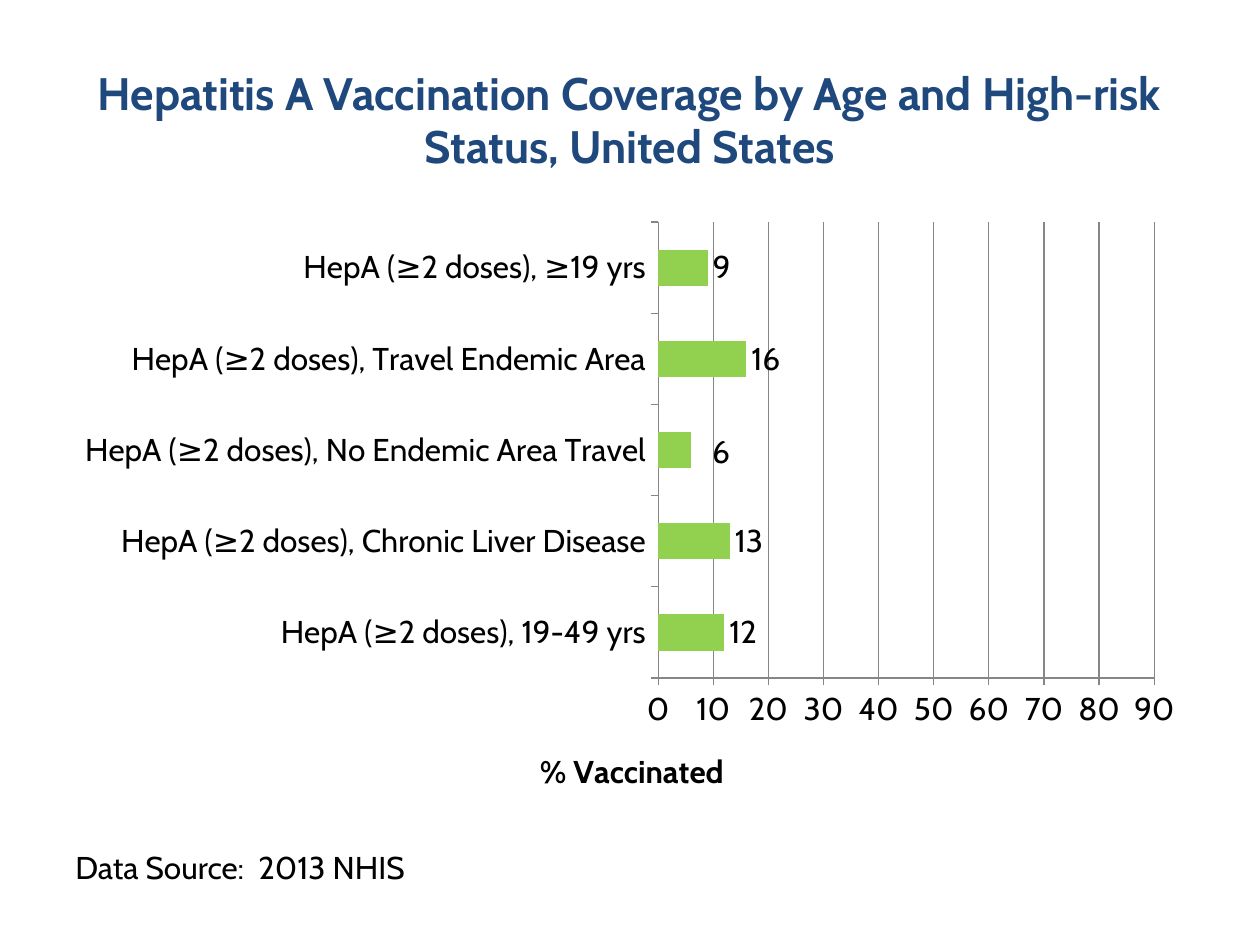
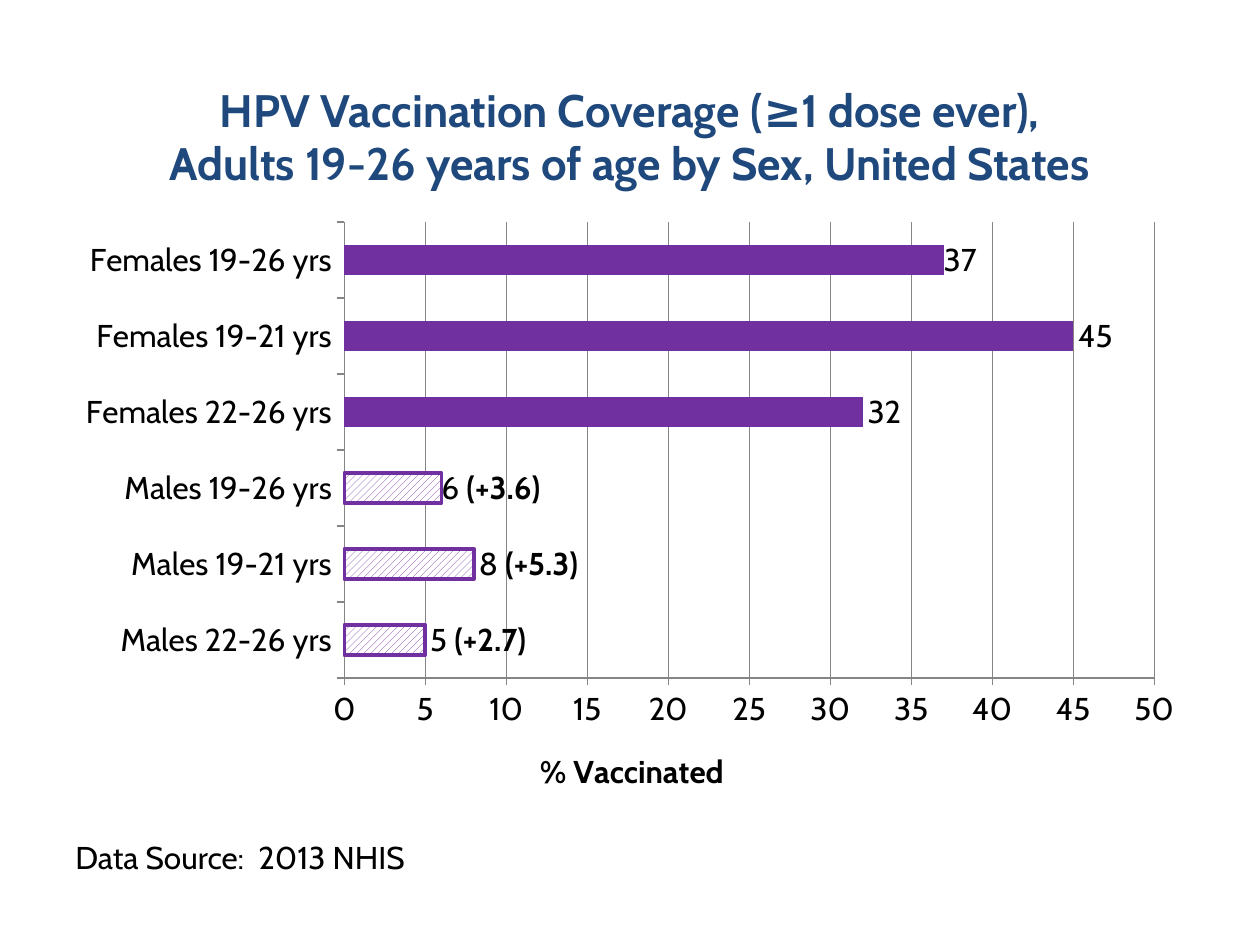
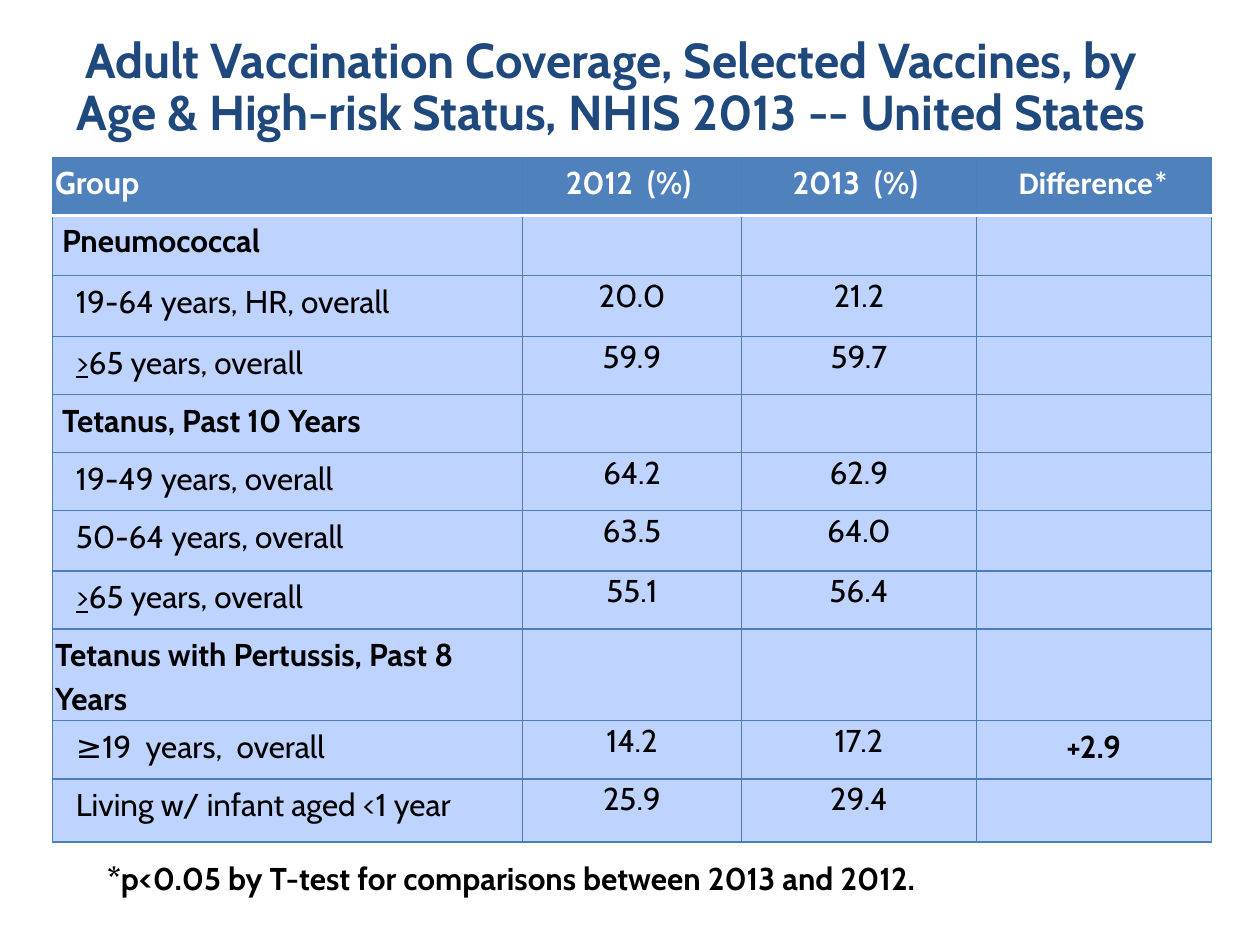
from dataclasses import dataclass

from lxml import etree
from pptx import Presentation
from pptx.chart.data import CategoryChartData
from pptx.dml.color import RGBColor
from pptx.enum.chart import XL_CHART_TYPE, XL_LABEL_POSITION, XL_TICK_MARK
from pptx.enum.dml import MSO_PATTERN
from pptx.enum.text import MSO_ANCHOR, MSO_AUTO_SIZE, PP_ALIGN
from pptx.oxml.ns import qn
from pptx.util import Cm, Pt

BAR = XL_CHART_TYPE.BAR_CLUSTERED
OUTSIDE_END = XL_LABEL_POSITION.OUTSIDE_END
TICK_OUT = XL_TICK_MARK.OUTSIDE
HATCH = MSO_PATTERN.WIDE_UPWARD_DIAGONAL
TOP, BOTTOM = MSO_ANCHOR.TOP, MSO_ANCHOR.BOTTOM
CENTER, LEFT = PP_ALIGN.CENTER, PP_ALIGN.LEFT
NO_FIT = MSO_AUTO_SIZE.NONE
TITLE_ONLY = 5


@dataclass(frozen=True)
class Theme:
    font: str = "Cabin"
    alt_font: str = "Calibri"
    title: str = "1F497D"
    text: str = "000000"
    white: str = "FFFFFF"
    grid: str = "868686"
    green: str = "92D050"
    purple: str = "7030A0"
    header: str = "4F81BD"
    cell: str = "BFD3FF"
    border: str = "4B7EBC"
    title_size: float = 26
    table_title_size: float = 28
    title_leading: float = 30
    body_size: float = 18


T = Theme()
MARGIN, CONTENT_WIDTH = 1.27, 22.86
CHART_TOP, CHART_HEIGHT = 4.24, 12.27
PLOT_TOP, PLOT_RIGHT, PLOT_HEIGHT = 0.24, 22, 9.19
AXIS_TITLE_LEFT, AXIS_TITLE_TOP = 9.5, 10.76
CELL_INSETS = {"margin_left": 0.05, "margin_right": 0.05,
               "margin_top": 0.03, "margin_bottom": 0.04}
LABEL_INDENT = 0.42

HEPA_COVERAGE = {
    "HepA (≥2 doses), 19-49 yrs": 12,
    "HepA (≥2 doses), Chronic Liver Disease": 13,
    "HepA (≥2 doses), No Endemic Area Travel": 6,
    "HepA (≥2 doses), Travel Endemic Area": 16,
    "HepA (≥2 doses), ≥19 yrs": 9,
}
HPV_COVERAGE = {
    "Males 22-26 yrs": 5,
    "Males 19-21 yrs": 8,
    "Males 19-26 yrs": 6,
    "Females 22-26 yrs": 32,
    "Females 19-21 yrs": 45,
    "Females 19-26 yrs": 37,
}
MALE_CHANGES = ["(+2.7)", "(+5.3)", "(+3.6)"]

COLUMN_WIDTHS = [9.47, 4.42, 4.73, 4.74]
ROW_HEIGHTS = [1.17, 1.22, 1.22, 1.17, 1.17, 1.17, 1.22, 1.17, 1.17, 1.17, 1.27]
HEADINGS = ["Group", "2012  (%) ", "2013  (%) ", "Difference*"]
# Each group: name, indent of the name in cm, rows of label, 2012, 2013, difference
VACCINE_GROUPS = [
    ("Pneumococcal", 0.14, [
        ("19-64 years, HR, overall", "20.0", "21.2", ""),
        (">65 years, overall", "59.9", "59.7", "")]),
    ("Tetanus, Past 10 Years", 0.14, [
        ("19-49 years, overall", "64.2", "62.9", ""),
        ("50-64 years, overall", "63.5", "64.0", ""),
        (">65 years, overall", "55.1", "56.4", "")]),
    ("Tetanus with Pertussis, Past 8 Years", 0, [
        ("≥19  years,  overall", "14.2", "17.2", "+2.9"),
        ("Living w/ infant aged <1 year", "25.9", "29.4", "")]),
]


def rgb(color):
    return RGBColor.from_string(color)


def set_attrs(target, values):
    for name, value in values.items():
        setattr(target, name, value)


def style_font(font, size=T.body_size, color=T.text, **attrs):
    set_attrs(font, {"name": T.font, "size": Pt(size), "bold": False, **attrs})
    font.color.rgb = rgb(color)


def add_run(p, text, **fmt):
    r = p.add_run()
    r.text = text
    style_font(r.font, **fmt)


def add_titled_slide(prs, text, top, left=MARGIN, height=3.18, size=T.title_size):
    s = prs.slides.add_slide(prs.slide_layouts[TITLE_ONLY])
    title = s.shapes.title
    set_attrs(title, {"left": Cm(left), "top": Cm(top),
                      "width": Cm(CONTENT_WIDTH), "height": Cm(height)})
    tf = title.text_frame
    set_attrs(tf, {"text": text, "vertical_anchor": BOTTOM,
                   "word_wrap": True, "auto_size": NO_FIT})
    p = tf.paragraphs[0]
    set_attrs(p, {"alignment": CENTER, "line_spacing": Pt(T.title_leading)})
    for r in p.runs:
        style_font(r.font, size, T.title, bold=True)
    return s


def add_text(s, text, left, top, width, height, anchor=TOP, **fmt):
    tf = s.shapes.add_textbox(Cm(left), Cm(top), Cm(width), Cm(height)).text_frame
    set_attrs(tf, {"word_wrap": True, "vertical_anchor": anchor})
    add_run(tf.paragraphs[0], text, **fmt)


def add_source(s, top):
    add_text(s, "Data Source:  2013 NHIS", MARGIN, top, CONTENT_WIDTH, 1.7, BOTTOM)


def set_layout(parent, index, x, y, w=None, h=None, **modes):
    """Place a chart part by lengths in cm, stored as fractions of the chart."""
    for old in parent.findall(qn("c:layout")):
        parent.remove(old)
    layout = etree.Element(qn("c:layout"))
    manual = etree.SubElement(layout, qn("c:manualLayout"))
    values = dict(modes)
    for name, length, whole in (("x", x, CONTENT_WIDTH), ("y", y, CHART_HEIGHT),
                                ("w", w, CONTENT_WIDTH), ("h", h, CHART_HEIGHT)):
        if length is not None:
            values[name] = length / whole
    for name, value in values.items():
        etree.SubElement(manual, qn(f"c:{name}")).set("val", str(value))
    parent.insert(index, layout)


def style_axis(axis):
    axis.major_tick_mark = TICK_OUT
    axis.format.line.color.rgb = rgb(T.grid)
    axis.format.line.width = Pt(0.75)


def style_value_axis(axis, maximum, step):
    style_axis(axis)
    set_attrs(axis, {"minimum_scale": 0, "maximum_scale": maximum,
                     "major_unit": step, "has_major_gridlines": True})
    set_attrs(axis.tick_labels, {"number_format": "0", "number_format_is_linked": False})
    line = axis.major_gridlines.format.line
    line.color.rgb = rgb(T.grid)
    line.width = Pt(0.75)
    add_run(axis.axis_title.text_frame.paragraphs[0], "% Vaccinated", bold=True)


def set_point_label(chart, index, plain, bold="", nudge=None):
    """Write one bar's label; nudge is an offset (x, y) in cm."""
    label = chart.plots[0].series[0].points[index].data_label
    p = label.text_frame.paragraphs[0]
    add_run(p, plain)
    if bold:
        add_run(p, bold, bold=True)
    label.position = OUTSIDE_END
    if nudge:
        element = chart.element.xpath(f'.//c:dLbl[c:idx/@val="{index}"]')[0]
        set_layout(element, 1, *nudge)


def add_coverage_chart(s, coverage, color, maximum, step, plot_left):
    data = CategoryChartData()
    data.categories = list(coverage)
    data.add_series("Series 1", list(coverage.values()))
    chart = s.shapes.add_chart(BAR, Cm(MARGIN), Cm(CHART_TOP), Cm(CONTENT_WIDTH),
                               Cm(CHART_HEIGHT), data).chart
    set_attrs(chart, {"has_legend": False, "has_title": False})
    style_font(chart.font)
    style_axis(chart.category_axis)
    style_value_axis(chart.value_axis, maximum, step)

    plot = chart.plots[0]
    set_attrs(plot, {"gap_width": 150, "vary_by_categories": False})
    series = plot.series[0]
    set_attrs(series.data_labels, {"show_value": True, "number_format": "0",
                                   "number_format_is_linked": False,
                                   "position": OUTSIDE_END})
    for leader in chart.element.xpath(".//c:showLeaderLines"):
        leader.set("val", "0")
    fill = series.format.fill
    fill.solid()
    fill.fore_color.rgb = rgb(color)

    set_layout(chart.element.xpath("c:chart/c:plotArea")[0], 0, plot_left, PLOT_TOP,
               PLOT_RIGHT - plot_left, PLOT_HEIGHT,
               layoutTarget="inner", xMode="edge", yMode="edge")
    set_layout(chart.element.xpath(".//c:valAx/c:title")[0], 1,
               AXIS_TITLE_LEFT, AXIS_TITLE_TOP, xMode="edge", yMode="edge")
    return chart


def hatch_point(point, color):
    fill = point.format.fill
    fill.patterned()
    fill.pattern = HATCH
    fill.fore_color.rgb = rgb(color)
    fill.back_color.rgb = rgb(T.white)
    point.format.line.color.rgb = rgb(color)
    point.format.line.width = Pt(2)


def set_borders(cell, top, bottom):
    """Draw the four borders; top and bottom are pairs of colour and points."""
    side = (T.border, 0.75)
    tc_pr = cell._tc.get_or_add_tcPr()
    edges = {"a:lnL": side, "a:lnR": side, "a:lnT": top, "a:lnB": bottom}
    for index, (tag, (color, width)) in enumerate(edges.items()):
        line = etree.Element(qn(tag), w=str(Pt(width)))
        solid = etree.SubElement(line, qn("a:solidFill"))
        etree.SubElement(solid, qn("a:srgbClr"), val=color)
        tc_pr.insert(index, line)


def fill_cell(cell, text, row, indent=0, align=LEFT, spaced=True, **fmt):
    set_attrs(cell, {name: Cm(value) for name, value in CELL_INSETS.items()})
    cell.margin_left = Cm(CELL_INSETS["margin_left"] + indent)
    cell.vertical_anchor = TOP
    cell.fill.solid()
    cell.fill.fore_color.rgb = rgb(T.cell if row else T.header)
    thin, rule = (T.border, 0.75), (T.white, 2)
    set_borders(cell, rule if row == 1 else thin, thin if row else rule)
    p = cell.text_frame.paragraphs[0]
    p.alignment = align
    if not text:
        style_font(p.font)
        return
    if spaced:
        set_attrs(p, {"line_spacing": 1.15, "space_after": Pt(10)})
    if text.startswith(">"):
        add_run(p, ">", underline=True, **fmt)
        text = text[1:]
    add_run(p, text, **fmt)


def add_vaccine_table(s):
    table = s.shapes.add_table(len(ROW_HEIGHTS), len(COLUMN_WIDTHS), Cm(1.06), Cm(3.17),
                               Cm(sum(COLUMN_WIDTHS)), Cm(sum(ROW_HEIGHTS))).table
    table.horz_banding = False
    for column, width in zip(table.columns, COLUMN_WIDTHS):
        column.width = Cm(width)
    for row, height in zip(table.rows, ROW_HEIGHTS):
        row.height = Cm(height)

    for col, heading in enumerate(HEADINGS):
        font = T.alt_font if heading == "Difference*" else T.font
        fill_cell(table.cell(0, col), heading, 0, align=CENTER if col else LEFT,
                  name=font, color=T.white, bold=True)
    row = 1
    for group, indent, records in VACCINE_GROUPS:
        fill_cell(table.cell(row, 0), group, row, indent, bold=True)
        for col in range(1, len(HEADINGS)):
            fill_cell(table.cell(row, col), "", row)
        row += 1
        for label, before, after, difference in records:
            fill_cell(table.cell(row, 0), label, row, LABEL_INDENT)
            for col, value in enumerate((before, after), 1):
                fill_cell(table.cell(row, col), value, row, align=CENTER, spaced=False)
            fill_cell(table.cell(row, 3), difference, row, align=CENTER, bold=True)
            row += 1


def build_hepa_slide(prs):
    s = add_titled_slide(prs, "Hepatitis A Vaccination Coverage by Age and High-risk "
                              "Status, United States", 0.42)
    chart = add_coverage_chart(s, HEPA_COVERAGE, T.green, 90, 10, 12)
    no_travel = list(HEPA_COVERAGE).index("HepA (≥2 doses), No Endemic Area Travel")
    set_point_label(chart, no_travel, "6", nudge=(0.32, 0.04))
    add_source(s, 16.29)


def build_hpv_slide(prs):
    s = add_titled_slide(prs, "HPV Vaccination Coverage (≥1 dose ever),\v"
                              "Adults 19-26 years of age by Sex, United States", 0.76)
    chart = add_coverage_chart(s, HPV_COVERAGE, T.purple, 50, 5, 5.67)
    points = chart.plots[0].series[0].points
    nudges = {"Males 19-26 yrs": (-0.1, 0), "Females 19-26 yrs": (-0.1, 0)}
    for index, (group, value) in enumerate(HPV_COVERAGE.items()):
        if index < len(MALE_CHANGES):
            hatch_point(points[index], T.purple)
            set_point_label(chart, index, f"{value} ", MALE_CHANGES[index],
                            nudges.get(group))
        elif group in nudges:
            set_point_label(chart, index, str(value), nudge=nudges[group])
    add_source(s, 16.08)


def build_table_slide(prs):
    s = add_titled_slide(prs, "Adult Vaccination Coverage, Selected Vaccines, by Age & "
                              "High-risk Status, NHIS 2013 -- United States",
                         0, 0.89, 2.96, T.table_title_size)
    add_vaccine_table(s)
    add_text(s, "*p<0.05 by T-test for comparisons between 2013 and 2012.",
             1.91, 17.2, 22.43, 1.02, bold=True)


def main():
    prs = Presentation()
    prs.slide_width, prs.slide_height = Cm(25.4), Cm(19.05)
    build_hepa_slide(prs)
    build_hpv_slide(prs)
    build_table_slide(prs)
    prs.save("out.pptx")


if __name__ == "__main__":
    main()
